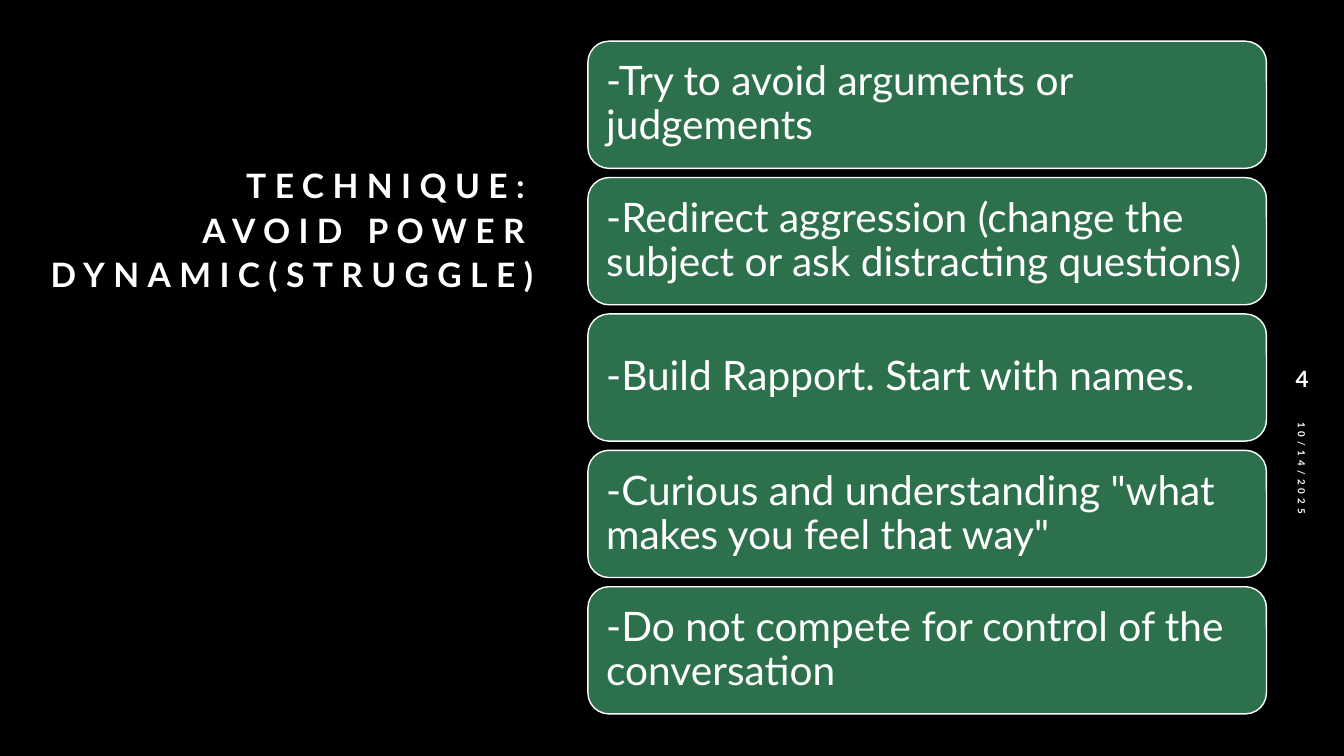
import dataclasses

import pptx
import pptx.dml.color
import pptx.enum.shapes
import pptx.enum.text
import pptx.util

Align = pptx.enum.text.PP_ALIGN
Anchor = pptx.enum.text.MSO_ANCHOR
WIDTH = pptx.util.Inches(13.33)
HEIGHT = pptx.util.Inches(7.5)
BLACK, WHITE, GREEN = "000000", "FFFFFF", "2D714C"

TIPS = (
    "-Try to avoid arguments or judgements",
    "-Redirect aggression (change the subject or ask distracting questions)",
    "-Build Rapport. Start with names.",
    '-Curious and understanding "what makes you feel that way"',
    "-Do not compete for control of the conversation",
)


@dataclasses.dataclass(frozen=True)
class Area:
    """Place and size in percent of the slide."""
    left: float
    top: float
    width: float
    height: float

    def frame(self) -> tuple[int, int, int, int]:
        return (int(WIDTH * self.left / 100), int(HEIGHT * self.top / 100),
                int(WIDTH * self.width / 100), int(HEIGHT * self.height / 100))


@dataclasses.dataclass(frozen=True)
class Style:
    size: float
    bold: bool = True
    align: Align = Align.LEFT
    anchor: Anchor = Anchor.MIDDLE
    lead: float = 1.0
    track: float = 0


TITLE = Style(24, align=Align.RIGHT, anchor=Anchor.BOTTOM, lead=1.1, track=6)
DATE = Style(7, track=3)
NUMBER = Style(16, align=Align.CENTER)
TIP = Style(29, bold=False, lead=0.9)

TITLE_AREA = Area(2.63, 11.2, 37.81, 28.4)
DATE_AREA = Area(85.9, 71.33, 21.91, 5.33)
NUMBER_AREA = Area(94.3, 46.93, 5.18, 6.27)
FIRST_TIP = Area(43.74, 5.45, 50.49, 16.83)
TIP_STEP = 18.04


def paint(fill, color: str) -> None:
    fill.solid()
    fill.fore_color.rgb = pptx.dml.color.RGBColor.from_string(color)


def write(shape, text: str, style: Style) -> None:
    frame = shape.text_frame
    frame.text = text
    frame.word_wrap = True
    frame.auto_size = pptx.enum.text.MSO_AUTO_SIZE.NONE
    frame.vertical_anchor = style.anchor
    for para in frame.paragraphs:
        para.alignment = style.align
        para.line_spacing = style.lead
        for run in para.runs:
            run.font.name = "Lato"
            run.font.size = pptx.util.Pt(style.size)
            run.font.bold = style.bold
            paint(run.font.fill, WHITE)
            if style.track:
                run.font._element.set("spc", str(int(style.track * 100)))


def add_title(slide, text: str) -> None:
    title = slide.shapes.title
    title.left, title.top, title.width, title.height = TITLE_AREA.frame()
    write(title, text, TITLE)


def add_note(slide, area: Area, text: str, style: Style, turn: float = 0) -> None:
    box = slide.shapes.add_textbox(*area.frame())
    box.rotation = turn
    write(box, text, style)


def add_tip(slide, area: Area, text: str) -> None:
    card = slide.shapes.add_shape(
        pptx.enum.shapes.MSO_SHAPE.ROUNDED_RECTANGLE, *area.frame())
    card.shadow.inherit = False
    paint(card.fill, GREEN)
    paint(card.line.fill, WHITE)
    card.line.width = pptx.util.Pt(1)
    write(card, text, TIP)
    frame = card.text_frame
    frame.margin_left = frame.margin_right = pptx.util.Inches(0.12)
    frame.margin_top = frame.margin_bottom = pptx.util.Inches(0.12)


def main() -> None:
    deck = pptx.Presentation()
    deck.slide_width, deck.slide_height = WIDTH, HEIGHT
    slide = deck.slides.add_slide(deck.slide_layouts.get_by_name("Title Only"))
    paint(slide.background.fill, BLACK)
    add_title(slide, "TECHNIQUE:\vAVOID POWER DYNAMIC(STRUGGLE)")
    add_note(slide, DATE_AREA, "10/14/2025", DATE, turn=90)
    add_note(slide, NUMBER_AREA, "4", NUMBER)
    for row, tip in enumerate(TIPS):
        top = FIRST_TIP.top + row * TIP_STEP
        add_tip(slide, dataclasses.replace(FIRST_TIP, top=top), tip)
    deck.save("out.pptx")


if __name__ == "__main__":
    main()
